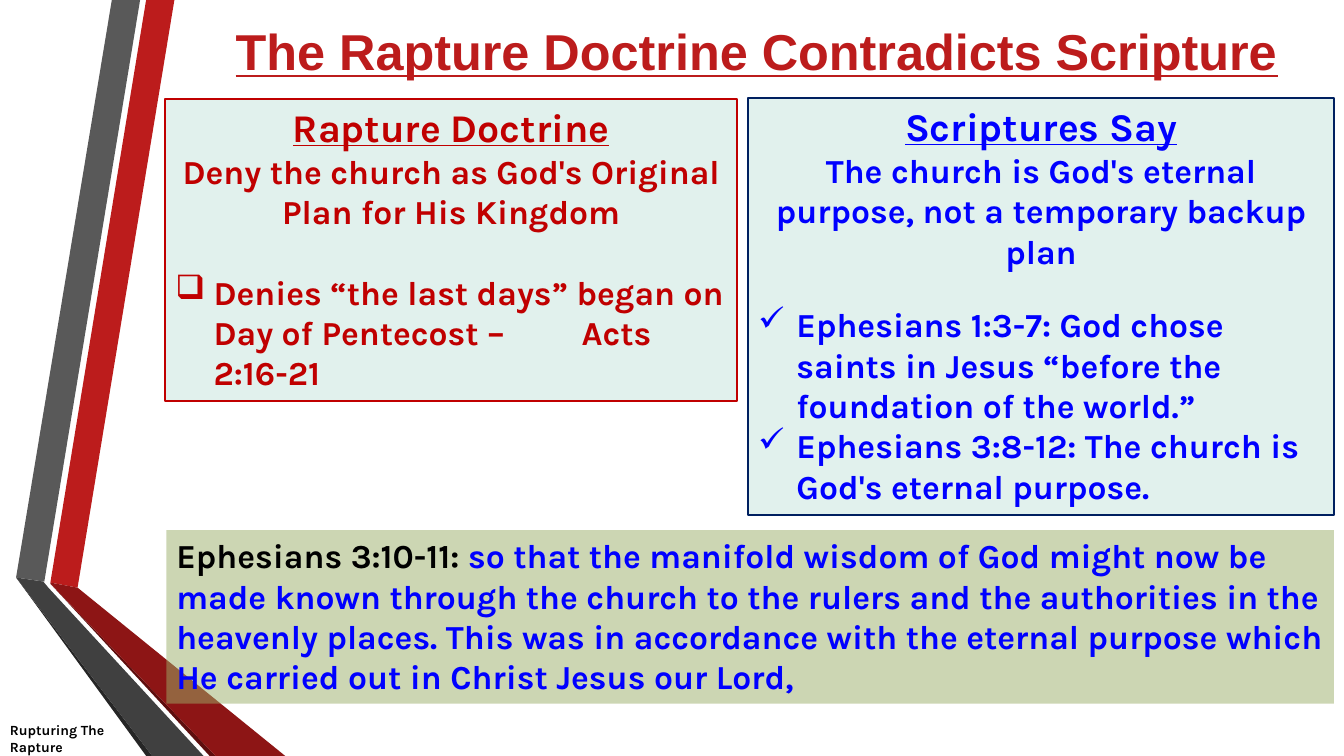
import pptx
import pptx.util
import pptx.dml.color
import pptx.enum.shapes
import pptx.enum.text
import pptx.oxml.ns
import lxml.etree

Inches = pptx.util.Inches
Pt = pptx.util.Pt
Color = pptx.dml.color.RGBColor.from_string
Align = pptx.enum.text.PP_ALIGN
Anchor = pptx.enum.text.MSO_ANCHOR
qn = pptx.oxml.ns.qn

theme = {
    "title_font": "Arial", "body_font": "Karla",
    "title_size": 36, "heading_size": 28, "body_size": 24, "footer_size": 10,
    "title": "BC1C1C", "doctrine": "C00000", "scripture": "0000FF",
    "scripture_line": "002060", "black": "000000", "panel": "E1F1ED", "verse": "9BAF68",
    "red": "BC1C1C", "gray": "595959", "gray_edge": "262626",
    "red_edge": "5E0E0E", "red_fold": "8D1515", "gray_fold": "404040",
}

deck = pptx.Presentation()
deck.slide_width, deck.slide_height = Inches(13.33), Inches(7.5)
page = deck.slides.add_slide(deck.slide_layouts[6])


def add_panel(left, top, width, height, fill, line=None):
    box = page.shapes.add_shape(
        pptx.enum.shapes.MSO_SHAPE.RECTANGLE,
        Inches(left), Inches(top), Inches(width), Inches(height))
    box.shadow.inherit = False
    box.fill.solid()
    box.fill.fore_color.rgb = Color(theme[fill])
    if line:
        box.line.color.rgb = Color(theme[line])
        box.line.width = Pt(1.5)
    else:
        box.line.fill.background()
    box.text_frame.word_wrap = True
    box.text_frame.vertical_anchor = Anchor.TOP
    box.text_frame.auto_size = pptx.enum.text.MSO_AUTO_SIZE.SHAPE_TO_FIT_TEXT
    return box


def add_para(frame, text, size, color, align=Align.LEFT, font="body_font", underline=False):
    para = frame.paragraphs[0] if not frame.text else frame.add_paragraph()
    para.text = text
    para.alignment = align
    para.font.name = theme[font]
    para.font.size = Pt(theme[size])
    para.font.color.rgb = Color(theme[color])
    para.font.bold = True
    para.font.underline = underline
    return para


# Folded ribbons along the left edge
ribbons = [
    ("red", [(0.5, 5.78), (0.77, 5.83), (1.73, 0), (1.45, 0)]),
    ("gray", [(1.39, 0), (1.11, 0), (0.16, 5.73), (0.44, 5.77)]),
    ("gray_edge", [(0.16, 5.73), (1.45, 7.5), (1.51, 7.5)]),
    ("red_edge", [(0.5, 5.79), (2.08, 7.5), (2.14, 7.5)]),
    ("red_fold", [(0.5, 5.78), (0.5, 5.79), (2.14, 7.5), (2.83, 7.5), (0.77, 5.83)]),
    ("gray_fold", [(2.02, 7.5), (0.48, 5.83), (0.43, 5.77), (0.16, 5.73), (1.51, 7.5)]),
]
for color, points in ribbons:
    corners = [(Inches(x), Inches(y)) for x, y in points]
    builder = page.shapes.build_freeform(*corners[0])
    builder.add_line_segments(corners[1:], close=True)
    ribbon = builder.convert_to_shape()
    ribbon.shadow.inherit = False
    ribbon.fill.solid()
    ribbon.fill.fore_color.rgb = Color(theme[color])
    ribbon.line.fill.background()

# Title and footer
captions = [
    ((1.67, 0, 11.67, 1), ["The Rapture Doctrine Contradicts Scripture"],
     ("title_size", "title", Align.CENTER, "title_font", True)),
    ((0, 7.15, 10, 0.35), ["Rupturing The", "Rapture"], ("footer_size", "black")),
]
for place, lines, style in captions:
    frame = page.shapes.add_textbox(*map(Inches, place)).text_frame
    frame.word_wrap = True
    frame.vertical_anchor = Anchor.MIDDLE
    for line in lines:
        add_para(frame, line, *style)

# Two facing panels: heading, summary, bulleted points
panels = [
    {"place": (1.64, 0.98, 5.67, 3), "line": "doctrine", "color": "doctrine",
     "heading": "Rapture Doctrine",
     "summary": "Deny the church as God's Original Plan for His Kingdom",
     "gap": 28.8, "bullet": "❑",
     "points": ["Denies “the last days” began on Day of Pentecost –\tActs 2:16-21"]},
    {"place": (7.42, 0.97, 5.81, 4.14), "line": "scripture_line", "color": "scripture",
     "heading": "Scriptures Say",
     "summary": "The church is God's eternal purpose, not a temporary backup plan",
     "gap": 24, "bullet": "✓",
     "points": ["Ephesians 1:3-7: God chose saints in Jesus “before the foundation of the world.”",
                "Ephesians 3:8-12: The church is God's eternal purpose."]},
]
for panel in panels:
    frame = add_panel(*panel["place"], "panel", panel["line"]).text_frame
    add_para(frame, panel["heading"], "heading_size", panel["color"], Align.CENTER, underline=True)
    add_para(frame, panel["summary"], "body_size", panel["color"], Align.CENTER)
    for index, point in enumerate(panel["points"]):
        para = add_para(frame, point, "body_size", panel["color"])
        if index == 0:
            para.space_before = Pt(panel["gap"])
        # Hanging bullet, with a tab stop for the verse reference
        layout = para._p.get_or_add_pPr()
        layout.set("marL", str(Inches(0.38)))
        layout.set("indent", str(-Inches(0.38)))
        bullet = lxml.etree.Element(qn("a:buChar"), char=panel["bullet"])
        stops = lxml.etree.Element(qn("a:tabLst"))
        lxml.etree.SubElement(stops, qn("a:tab"), pos=str(Inches(4.03)), algn="l")
        style = layout.find(qn("a:defRPr"))
        style.addprevious(bullet)
        style.addprevious(stops)

# Closing verse on a half-transparent band
verse = add_panel(1.65, 5.26, 11.58, 1.72, "verse")
tint = verse.fill._xPr.find(qn("a:solidFill"))[0]
lxml.etree.SubElement(tint, qn("a:alpha"), val="50000")
para = add_para(verse.text_frame, "Ephesians 3:10-11: ", "body_size", "black")
span = para.add_run()
span.text = ("so that the manifold wisdom of God might now be made known through the church "
             "to the rulers and the authorities in the heavenly places. This was in accordance "
             "with the eternal purpose which He carried out in Christ Jesus our Lord,")
span.font.color.rgb = Color(theme["scripture"])

deck.save("out.pptx")
